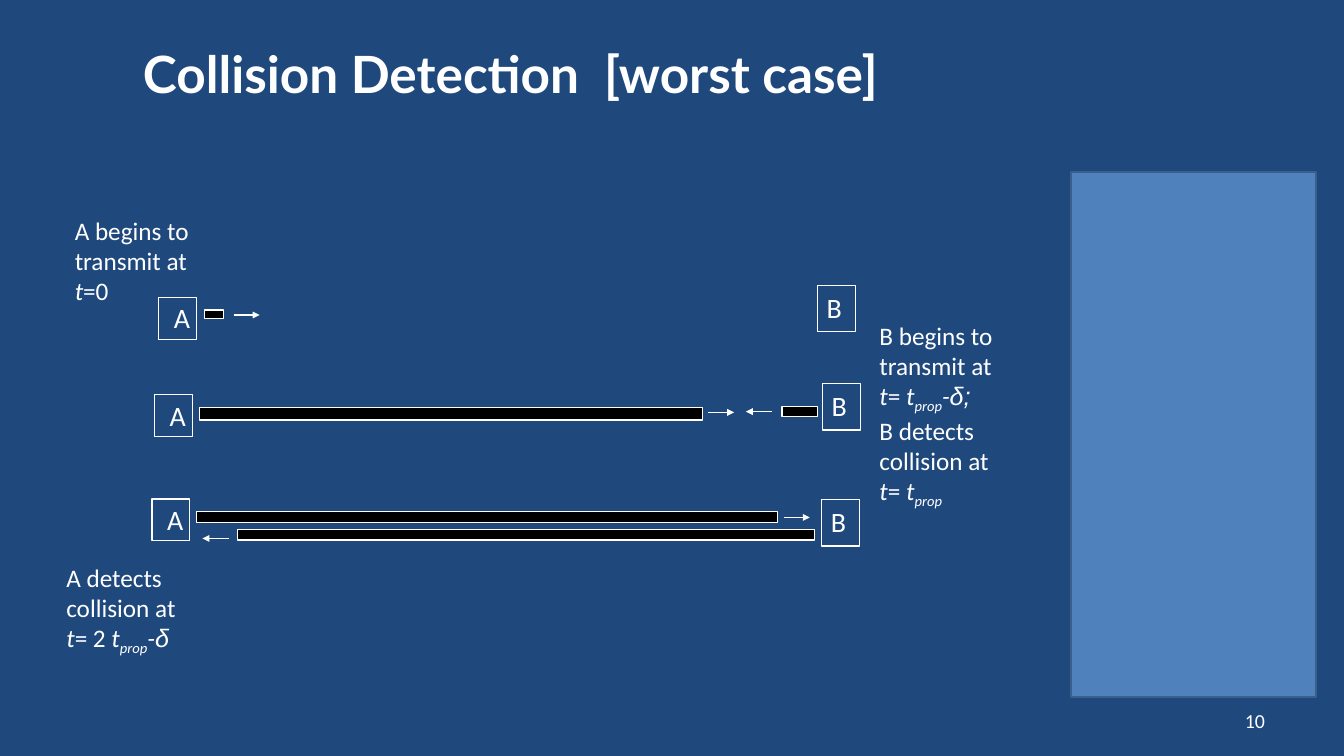
from pptx import Presentation
from pptx import util as u
from pptx.dml import color
from pptx.enum import shapes, text
from pptx.oxml import ns
from lxml import etree

COLORS = {"back": "1F497D", "white": "FFFFFF", "signal": "000000",
          "panel": "4F81BD", "panel_line": "3A5F8C"}
SUBSCRIPT = "-25000"
TIME = ("t", "i")
PROP = [TIME, ("prop", "sub")]


def rgb(name):
    return color.RGBColor.from_string(COLORS[name])


def add_run(para, words, size, style="", font="Calibri"):
    span = para.add_run()
    span.text = words
    span.font.size = u.Pt(size)
    span.font.name = font
    span.font.color.rgb = rgb("white")
    span.font.bold = style == "b"
    span.font.italic = style in ("i", "sub", "greek")
    if style == "sub":
        span.font._element.set("baseline", SUBSCRIPT)
    if style == "greek":
        span.font.name = "Arial"


def set_frame(box, side, end, anchor):
    frame = box.text_frame
    frame.word_wrap = True
    frame.auto_size = text.MSO_AUTO_SIZE.NONE
    frame.vertical_anchor = anchor
    frame.margin_left = frame.margin_right = u.Inches(side)
    frame.margin_top = frame.margin_bottom = u.Inches(end)
    return frame


def place(box, place_at):
    box.left, box.top, box.width, box.height = map(u.Inches, place_at)


def add_title(page, words):
    title = page.shapes.title
    place(title, (0.42, 0.4, 11.32, 0.93))
    frame = set_frame(title, 0.14, 0.07, text.MSO_ANCHOR.MIDDLE)
    para = frame.paragraphs[0]
    para.alignment = text.PP_ALIGN.CENTER
    add_run(para, words, 44, "b", "Lato")


def add_caption(page, place_at, lines, size=21.6):
    box = page.shapes.add_textbox(*map(u.Inches, place_at))
    frame = set_frame(box, 0.12, 0.06, text.MSO_ANCHOR.TOP)
    for index, line in enumerate(lines):
        para = frame.add_paragraph() if index else frame.paragraphs[0]
        for words, style in line:
            add_run(para, words, size, style)


def add_page_number(page, number):
    box = page.shapes.add_textbox(*map(u.Inches, (11.47, 8.34, 3.73, 0.48)))
    frame = set_frame(box, 0.14, 0.07, text.MSO_ANCHOR.MIDDLE)
    para = frame.paragraphs[0]
    para.alignment = text.PP_ALIGN.RIGHT
    add_run(para, number, 17)


def add_rect(page, place_at, fill=None, line="white", weight=1):
    rect = page.shapes.add_shape(shapes.MSO_SHAPE.RECTANGLE,
                                 *map(u.Inches, place_at))
    rect.shadow.inherit = False
    if fill:
        rect.fill.solid()
        rect.fill.fore_color.rgb = rgb(fill)
    else:
        rect.fill.background()
    rect.line.color.rgb = rgb(line)
    rect.line.width = u.Pt(weight)


def add_arrow(page, start, tip, y):
    arrow = page.shapes.add_connector(
        shapes.MSO_CONNECTOR.STRAIGHT,
        u.Inches(start), u.Inches(y), u.Inches(tip), u.Inches(y))
    arrow.line.color.rgb = rgb("white")
    arrow.line.width = u.Pt(1)
    etree.SubElement(arrow.line._get_or_add_ln(), ns.qn("a:tailEnd"),
                     type="triangle")
    etree.SubElement(arrow._element.spPr, ns.qn("a:effectLst"))


def add_station_a(page, left, top):
    add_rect(page, (left, top, 0.45, 0.5))
    add_caption(page, (left + 0.06, top - 0.02, 0.44, 0.52), [[("A", "")]], 24)


def add_station_b(page, left, top):
    add_rect(page, (left, top, 0.45, 0.55))
    add_caption(page, (left - 0.01, top, 0.42, 0.52), [[("B", "")]], 24)


def main():
    deck = Presentation()
    deck.slide_width, deck.slide_height = u.Inches(16), u.Inches(9)
    page = deck.slides.add_slide(deck.slide_layouts[5])
    page.background.fill.solid()
    page.background.fill.fore_color.rgb = rgb("back")

    add_title(page, "Collision Detection  [worst case]")

    for left, top in ((1.89, 3.54), (1.84, 4.7), (1.81, 5.94)):
        add_station_a(page, left, top)
    for left, top in ((9.73, 3.4), (9.79, 4.57), (9.78, 5.95)):
        add_station_b(page, left, top)

    for signal in ((2.43, 3.69, 0.23, 0.1), (2.38, 4.85, 5.98, 0.15),
                   (9.31, 4.84, 0.42, 0.12), (2.34, 6.09, 6.92, 0.13),
                   (2.83, 6.3, 6.87, 0.13)):
        add_rect(page, signal, "signal")

    for start, tip, y in ((2.78, 3.09, 3.75), (8.43, 8.74, 4.91),
                          (9.19, 8.88, 4.9), (9.33, 9.64, 6.16),
                          (2.73, 2.41, 6.41)):
        add_arrow(page, start, tip, y)

    add_caption(page, (0.77, 2.5, 1.68, 1.21), [
        [("A begins to", "")],
        [("transmit at", "")],
        [TIME, ("=0", "")]])
    add_caption(page, (10.35, 3.75, 1.67, 2.3), [
        [("B begins to", "")],
        [("transmit at", "")],
        [TIME, ("= ", ""), *PROP, ("-", "i"), ("δ;", "greek")],
        [("B detects", "")],
        [("collision at", "")],
        [TIME, ("= ", ""), *PROP]])
    add_caption(page, (0.67, 6.63, 2.07, 1.21), [
        [("A detects", "")],
        [("collision at", "")],
        [TIME, ("= 2 ", ""), *PROP, ("-", "i"), ("δ", "greek")]])

    add_page_number(page, "10")
    add_rect(page, (12.75, 2.05, 2.92, 6.25), "panel", "panel_line", 2)
    deck.save("out.pptx")


if __name__ == "__main__":
    main()
